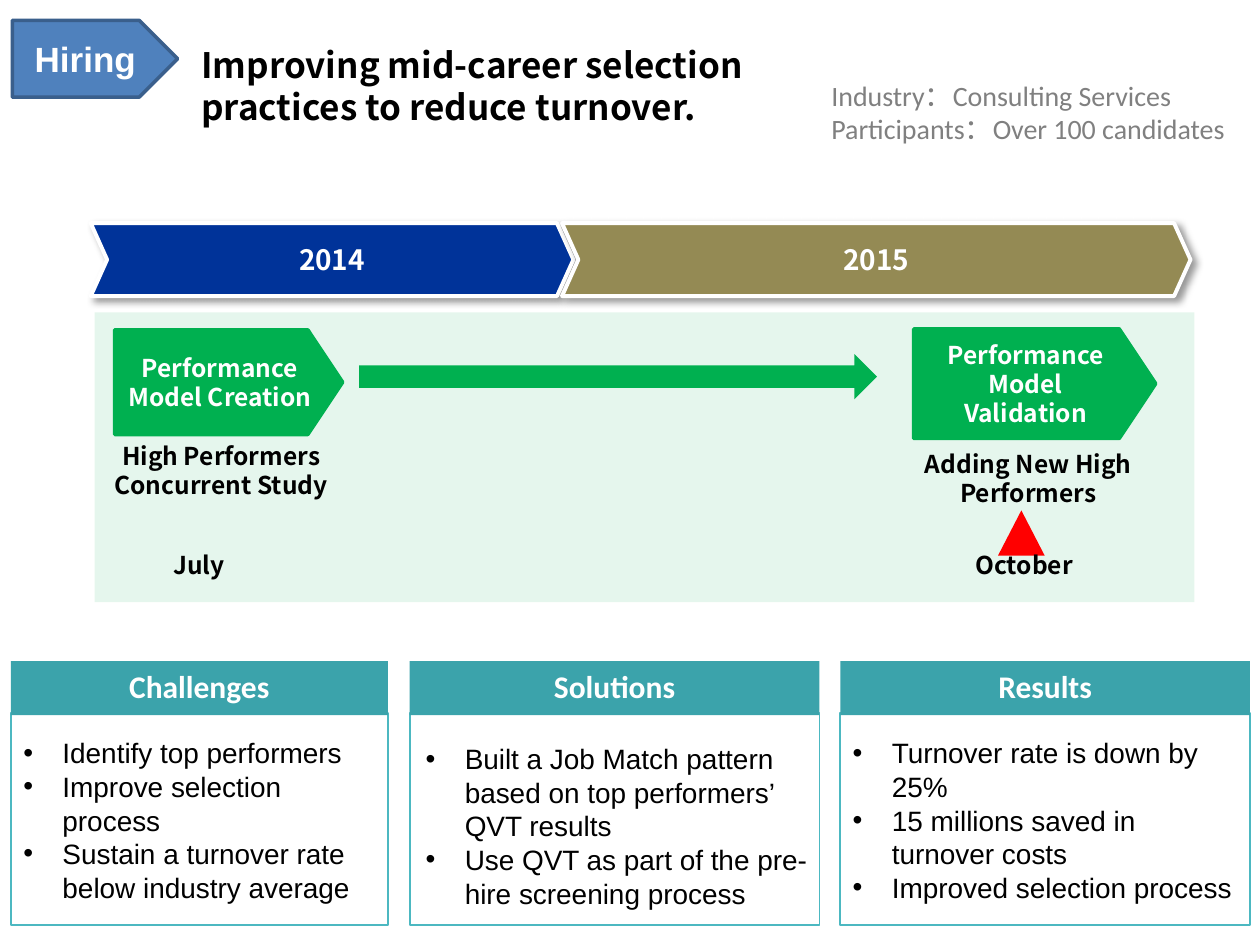
from lxml import etree
from pptx import Presentation
from pptx.dml.color import RGBColor
from pptx.enum.shapes import MSO_SHAPE
from pptx.enum.text import MSO_ANCHOR, PP_ALIGN
from pptx.oxml.ns import qn
from pptx.util import Cm, Pt

RECTANGLE, PENTAGON = MSO_SHAPE.RECTANGLE, MSO_SHAPE.PENTAGON
CHEVRON, TRIANGLE = MSO_SHAPE.CHEVRON, MSO_SHAPE.ISOSCELES_TRIANGLE
RIGHT_ARROW, PROCESS = MSO_SHAPE.RIGHT_ARROW, MSO_SHAPE.FLOWCHART_PROCESS
TOP, MIDDLE = MSO_ANCHOR.TOP, MSO_ANCHOR.MIDDLE
LEFT, CENTER = PP_ALIGN.LEFT, PP_ALIGN.CENTER

WHITE = RGBColor(0xFF, 0xFF, 0xFF)
BLACK = RGBColor(0, 0, 0)
GRAY = RGBColor(0x80, 0x80, 0x80)
GREEN = RGBColor(0, 0xB0, 0x50)
RED = RGBColor(0xFF, 0, 0)
NAVY = RGBColor(0, 0x33, 0x99)
KHAKI = RGBColor(0x94, 0x8A, 0x54)
TEAL = RGBColor(0x3B, 0xA3, 0xAB)
TEAL_LINE = RGBColor(0x4C, 0xB8, 0xC1)
BLUE = RGBColor(0x4F, 0x81, 0xBD)
BLUE_LINE = RGBColor(0x3A, 0x5F, 0x8C)

ARIAL, CALIBRI, NOTO = "Arial", "Calibri", "Noto Sans CJK JP"

# Content; boxes are left, top, width, height in centimetres
TITLE = "Improving mid-career selection practices to reduce turnover."
FACTS = ["Industry：Consulting Services", "Participants：Over 100 candidates"]
YEARS = [("2014", 1.83, 9.73, NAVY), ("2015", 11.33, 12.67, KHAKI)]
STAGES = [
    ("Performance Model Creation", (2.31, 6.65, 4.6, 2.11)),
    ("Performance Model Validation", (18.42, 6.63, 4.88, 2.21)),
]
STAGE_NOTES = [
    ("High Performers Concurrent Study", (1.55, 8.76, 5.82, 1.45)),
    ("Adding New High Performers", (18.19, 8.92, 5.08, 2.06)),
    ("July", (2.67, 10.97, 2.69, 0.86)),
    ("October", (19.3, 10.97, 2.69, 0.86)),
]
# Heading, card left, card width, text left, text top, bullets
CARDS = [
    ("Challenges", 0.22, 7.6, 0.22, 14.71,
     ["Identify top performers", "Improve selection process",
      "Sustain a turnover rate below industry average"]),
    ("Solutions", 8.26, 8.26, 8.33, 14.83,
     ["Built a Job Match pattern based on top performers’ QVT results",
      "Use QVT as part of the pre-hire screening process"]),
    ("Results", 16.94, 8.26, 16.94, 14.71,
     ["Turnover rate is down by 25%", "15 millions saved in turnover costs",
      "Improved selection process"]),
]
HEAD_TOP, HEAD_HEIGHT = 13.33, 1.09
BODY_TOP, BODY_HEIGHT = 14.38, 4.27

presentation = Presentation()
presentation.slide_width, presentation.slide_height = Cm(25.4), Cm(19.05)
slide = presentation.slides.add_slide(presentation.slide_layouts[6])


def add_box(kind, box, fill, line=None, line_width=1, adjustment=None):
    shape = slide.shapes.add_shape(kind, *map(Cm, box))
    shape.shadow.inherit = False
    shape.fill.solid()
    shape.fill.fore_color.rgb = fill
    if line is None:
        shape.line.fill.background()
    else:
        shape.line.color.rgb = line
        shape.line.width = Pt(line_width)
    if adjustment is not None:
        shape.adjustments[0] = adjustment
    return shape


def write(shape, lines, font, size, color, bold=True, align=CENTER, anchor=MIDDLE):
    frame = shape.text_frame
    frame.word_wrap = True
    frame.vertical_anchor = anchor
    frame.text = "\n".join(lines)
    for paragraph in frame.paragraphs:
        paragraph.alignment = align
        for run in paragraph.runs:
            run.font.name, run.font.size, run.font.bold = font, Pt(size), bold
            run.font.color.rgb = color


def add_text(box, lines, *style, **options):
    text_box = slide.shapes.add_textbox(*map(Cm, box))
    write(text_box, lines, *style, anchor=TOP, **options)
    return text_box


def add_bullets(text_box):
    for paragraph in text_box.text_frame.paragraphs:
        properties = paragraph._p.get_or_add_pPr()
        properties.set("marL", str(Cm(0.79)))
        properties.set("indent", str(-Cm(0.79)))
        etree.SubElement(properties, qn("a:buFont"), typeface=ARIAL)
        etree.SubElement(properties, qn("a:buChar"), char="•")


def set_alpha(color_element, percent):
    etree.SubElement(color_element, qn("a:alpha"), val=str(percent * 1000))


def add_shadow(shape):
    effects = shape._element.spPr.find(qn("a:effectLst"))
    shadow = etree.SubElement(
        effects, qn("a:outerShdw"), blurRad=str(Pt(4)), dist=str(Pt(3)),
        dir=str(45 * 60000), algn="tl", rotWithShape="0")
    set_alpha(etree.SubElement(shadow, qn("a:srgbClr"), val="000000"), 40)


# Cards
for heading, left, width, text_left, text_top, bullets in CARDS:
    add_box(RECTANGLE, (left, BODY_TOP, width, BODY_HEIGHT), WHITE, TEAL_LINE)
    head = add_box(RECTANGLE, (left, HEAD_TOP, width, HEAD_HEIGHT), TEAL)
    write(head, [heading], CALIBRI, 18, WHITE, anchor=TOP)
    add_bullets(add_text((text_left, text_top, width, 3.6), bullets,
                         ARIAL, 16, BLACK, bold=False, align=LEFT))

# Header
add_text((3.81, 0.76, 12.62, 3.28), [TITLE], NOTO, 20, BLACK, align=LEFT)
add_text((16.51, 1.45, 8.69, 1.91), FACTS, CALIBRI, 16, GRAY,
         bold=False, align=LEFT)
badge = add_box(PENTAGON, (0.25, 0.41, 3.33, 1.55), BLUE, BLUE_LINE, 2)
write(badge, ["Hiring"], ARIAL, 20, WHITE)

# Timeline
panel = add_box(PROCESS, (1.91, 6.3, 22.17, 5.84), GREEN)
set_alpha(panel._element.spPr.find(qn("a:solidFill"))[0], 10)
for year, left, width, color in YEARS:
    chevron = add_box(CHEVRON, (left, 4.5, width, 1.47), color, WHITE, 2.25, 0.225)
    add_shadow(chevron)
    write(chevron, [year], NOTO, 16, WHITE)
for name, box in STAGES:
    stage = add_box(PENTAGON, box, GREEN, GREEN, 2, 0.333)
    write(stage, [name], NOTO, 14, WHITE)
add_box(RIGHT_ARROW, (7.24, 7.14, 10.44, 0.91), GREEN)

# The marker lies behind the month label so that the label stays readable
add_box(TRIANGLE, (20.12, 10.29, 0.94, 0.91), RED)
for note, box in STAGE_NOTES:
    add_text(box, [note], NOTO, 14, BLACK)

presentation.save("out.pptx")
